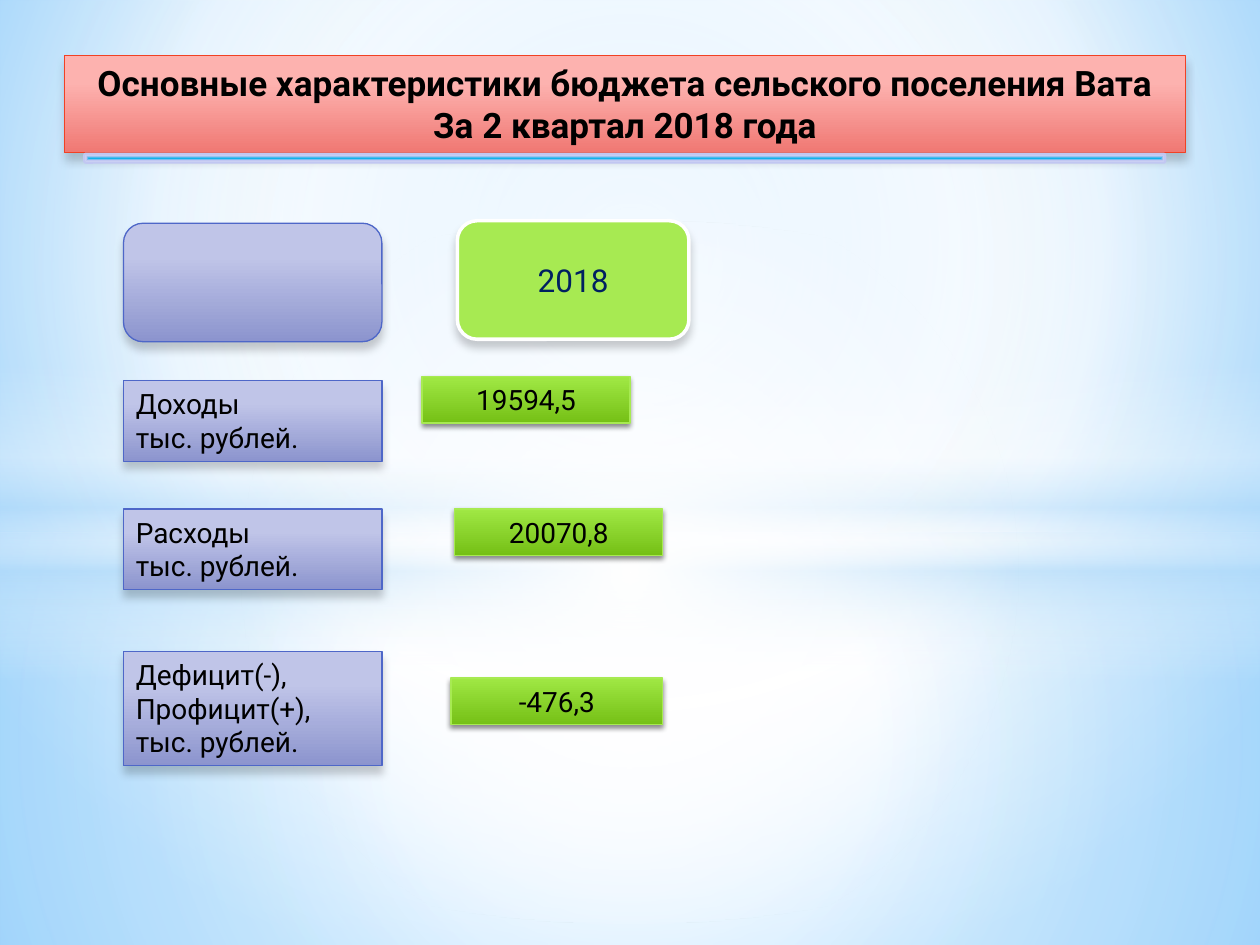
from dataclasses import dataclass
from typing import Optional

from pptx import Presentation
from pptx.dml.color import RGBColor
from pptx.enum.shapes import MSO_SHAPE
from pptx.enum.text import MSO_ANCHOR, MSO_AUTO_SIZE, PP_ALIGN
from pptx.oxml import parse_xml
from pptx.oxml.ns import nsdecls, qn
from pptx.util import Cm, Pt

RECT, ROUND, OVAL = MSO_SHAPE.RECTANGLE, MSO_SHAPE.ROUNDED_RECTANGLE, MSO_SHAPE.OVAL
LEFT, CENTER = PP_ALIGN.LEFT, PP_ALIGN.CENTER
TOP, MIDDLE = MSO_ANCHOR.TOP, MSO_ANCHOR.MIDDLE
GROW, FIXED = MSO_AUTO_SIZE.SHAPE_TO_FIT_TEXT, MSO_AUTO_SIZE.NONE

FONT = "Roboto"
BLACK = RGBColor(0x00, 0x00, 0x00)
WHITE = RGBColor(0xFF, 0xFF, 0xFF)
NAVY = RGBColor(0x00, 0x20, 0x60)
SKY = RGBColor(0x9E, 0xD5, 0xFF)
SKY_DEEP = RGBColor(0x5B, 0xB9, 0xFF)
SKY_PALE = RGBColor(0xB4, 0xDC, 0xFA)
PINK = RGBColor(0xFD, 0xB2, 0xAF)
CORAL = RGBColor(0xF0, 0x78, 0x73)
RED = RGBColor(0xF1, 0x41, 0x24)
LILAC = RGBColor(0xC0, 0xC5, 0xE8)
VIOLET = RGBColor(0x8C, 0x94, 0xCE)
INDIGO = RGBColor(0x4E, 0x67, 0xC8)
LIME = RGBColor(0xA7, 0xEA, 0x52)
LIME_TOP = RGBColor(0xA0, 0xE8, 0x44)
LIME_DEEP = RGBColor(0x75, 0xC0, 0x16)
CYAN = RGBColor(0x12, 0xB2, 0xEB)
LAVENDER = RGBColor(0xC1, 0xC7, 0xF2)
LAVENDER_PALE = RGBColor(0xE1, 0xE3, 0xF8)


@dataclass(frozen=True)
class Gradient:
    """Stops are (position %, colour, opacity %); linear unless path_kind is set."""
    stops: tuple
    path_kind: str = ""
    focus: tuple = (50, 50, 50, 50)


@dataclass(frozen=True)
class Shadow:
    opacity: int
    blur: float
    distance: float


@dataclass(frozen=True)
class Style:
    fill: Gradient
    line: Optional[RGBColor] = None
    line_width: float = 0.75
    shadow: Optional[Shadow] = None


@dataclass(frozen=True)
class Row:
    label: str
    label_top: float
    label_height: float
    value: str
    value_left: float
    value_top: float
    value_width: float


SOFT = Shadow(20, 5, 4)
BACKGROUND = Gradient(((0, SKY, 100), (60, WHITE, 100), (100, SKY_DEEP, 100)),
                      "circle", (20, 10, 20, 60))
BACKDROP = (
    (RECT, (0, 10.74, 25.4, 8.31),
     Gradient(((0, WHITE, 91), (37, WHITE, 76), (100, SKY_PALE, 79)), "circle")),
    (RECT, (0, 0, 25.4, 10.74),
     Gradient(((0, WHITE, 89), (48, WHITE, 62), (100, SKY_PALE, 79)), "circle")),
    (RECT, (0, 7.37, 25.4, 6.35),
     Gradient(((0, WHITE, 0), (29, WHITE, 30), (45, SKY_PALE, 40),
               (55, WHITE, 26), (65, SKY_PALE, 60), (100, WHITE, 0)))),
    (OVAL, (0, 4.45, 25.4, 14.17),
     Gradient(((0, WHITE, 100), (54, WHITE, 0)), "circle")),
)
TITLE = Style(Gradient(((28, PINK, 100), (100, CORAL, 100))), RED, shadow=SOFT)
LABEL = Style(Gradient(((28, LILAC, 100), (100, VIOLET, 100))), INDIGO, shadow=SOFT)
YEAR = Style(Gradient(((0, LIME, 100), (100, LIME, 100))), WHITE, 2, SOFT)
VALUE = Style(Gradient(((0, LIME_TOP, 100), (100, LIME_DEEP, 100))), LIME,
              shadow=Shadow(45, 3.1, 1.8))
RULE = Style(Gradient(((0, CYAN, 100), (50, LAVENDER, 100), (100, LAVENDER_PALE, 100)),
                      "rect"), LAVENDER, 1.25)

LABEL_LEFT, LABEL_WIDTH, HEADER_HEIGHT, VALUE_HEIGHT = 2.49, 5.21, 2.39, 0.94
ROWS = (
    Row("Доходы\nтыс. рублей.", 7.67, 1.63, "19594,5", 8.51, 7.59, 4.19),
    Row("Расходы\nтыс. рублей.", 10.26, 1.63, "20070,8", 9.17, 10.26, 4.19),
    Row("Дефицит(-),\nПрофицит(+),\nтыс. рублей.", 13.13, 2.31, "-476,3", 9.09, 13.67, 4.27),
)


def apply_gradient(fill, element, grad: Gradient) -> None:
    fill.solid()
    stops = "".join(
        f'<a:gs pos="{pos * 1000}"><a:srgbClr val="{color}">'
        f'<a:alpha val="{opacity * 1000}"/></a:srgbClr></a:gs>'
        for pos, color, opacity in grad.stops)
    if grad.path_kind:
        sides = " ".join(f'{side}="{n * 1000}"' for side, n in zip("ltrb", grad.focus))
        direction = f'<a:path path="{grad.path_kind}"><a:fillToRect {sides}/></a:path>'
    else:
        direction = '<a:lin ang="5400000" scaled="0"/>'
    solid = element.find(".//" + qn("a:solidFill"))
    solid.getparent().replace(solid, parse_xml(
        f'<a:gradFill {nsdecls("a")} rotWithShape="1">'
        f'<a:gsLst>{stops}</a:gsLst>{direction}</a:gradFill>'))


def add_box(slide, kind, box: tuple, style: Style):
    sp = slide.shapes.add_shape(kind, *(Cm(n) for n in box))
    sp_pr = sp._element.spPr
    if style is YEAR:
        sp.fill.solid()
        sp.fill.fore_color.rgb = LIME
    else:
        apply_gradient(sp.fill, sp_pr, style.fill)
    if style.line is None:
        sp.line.fill.background()
    else:
        sp.line.color.rgb = style.line
        sp.line.width = Pt(style.line_width)
    sp.shadow.inherit = False
    if style.shadow:
        sh = style.shadow
        sp_pr.find(qn("a:effectLst")).append(parse_xml(
            f'<a:outerShdw {nsdecls("a")} blurRad="{Pt(sh.blur)}" dist="{Pt(sh.distance)}" '
            f'dir="5400000" rotWithShape="0"><a:srgbClr val="{BLACK}">'
            f'<a:alpha val="{sh.opacity * 1000}"/></a:srgbClr></a:outerShdw>'))
    return sp


def set_text(sp, text: str, size: float, color: RGBColor = BLACK, align=CENTER,
             anchor=TOP, bold: bool = False, wrap: bool = True, auto_size=GROW) -> None:
    tf = sp.text_frame
    tf.text = text
    tf.word_wrap = wrap
    tf.auto_size = auto_size
    tf.vertical_anchor = anchor
    for p in tf.paragraphs:
        p.alignment = align
        for r in p.runs:
            r.font.name = FONT
            r.font.size = Pt(size)
            r.font.bold = bold
            r.font.color.rgb = color


def outline_text(sp, color: RGBColor, width: float) -> None:
    for p in sp.text_frame.paragraphs:
        for r in p.runs:
            r.font._element.insert(0, parse_xml(
                f'<a:ln {nsdecls("a")} w="{Pt(width)}"><a:solidFill>'
                f'<a:srgbClr val="{color}"/></a:solidFill></a:ln>'))


def main() -> None:
    prs = Presentation()
    prs.slide_width, prs.slide_height = Cm(25.4), Cm(19.05)
    slide = prs.slides.add_slide(prs.slide_layouts[6])

    # Background and light glows
    apply_gradient(slide.background.fill, slide._element, BACKGROUND)
    for kind, box, grad in BACKDROP:
        add_box(slide, kind, box, Style(grad))

    # Title with the rule under it
    title = add_box(slide, RECT, (1.3, 1.12, 22.6, 1.96), TITLE)
    set_text(title, "Основные характеристики бюджета сельского поселения Вата\n"
             "За 2 квартал 2018 года", 20, bold=True, wrap=False)
    outline_text(title, CYAN, 0.83)
    add_box(slide, ROUND, (1.7, 3.1, 21.79, 0.18), RULE)

    # Column headers
    add_box(slide, ROUND, (LABEL_LEFT, 4.5, LABEL_WIDTH, HEADER_HEIGHT), LABEL)
    year = add_box(slide, ROUND, (9.22, 4.45, 4.67, HEADER_HEIGHT), YEAR)
    set_text(year, "2018", 18, NAVY, anchor=MIDDLE, auto_size=FIXED)

    # Budget rows
    for row in ROWS:
        label = add_box(slide, RECT, (LABEL_LEFT, row.label_top, LABEL_WIDTH,
                                      row.label_height), LABEL)
        set_text(label, row.label, 16, align=LEFT)
        value = add_box(slide, RECT, (row.value_left, row.value_top, row.value_width,
                                      VALUE_HEIGHT), VALUE)
        set_text(value, row.value, 16)

    prs.save("out.pptx")


if __name__ == "__main__":
    main()
